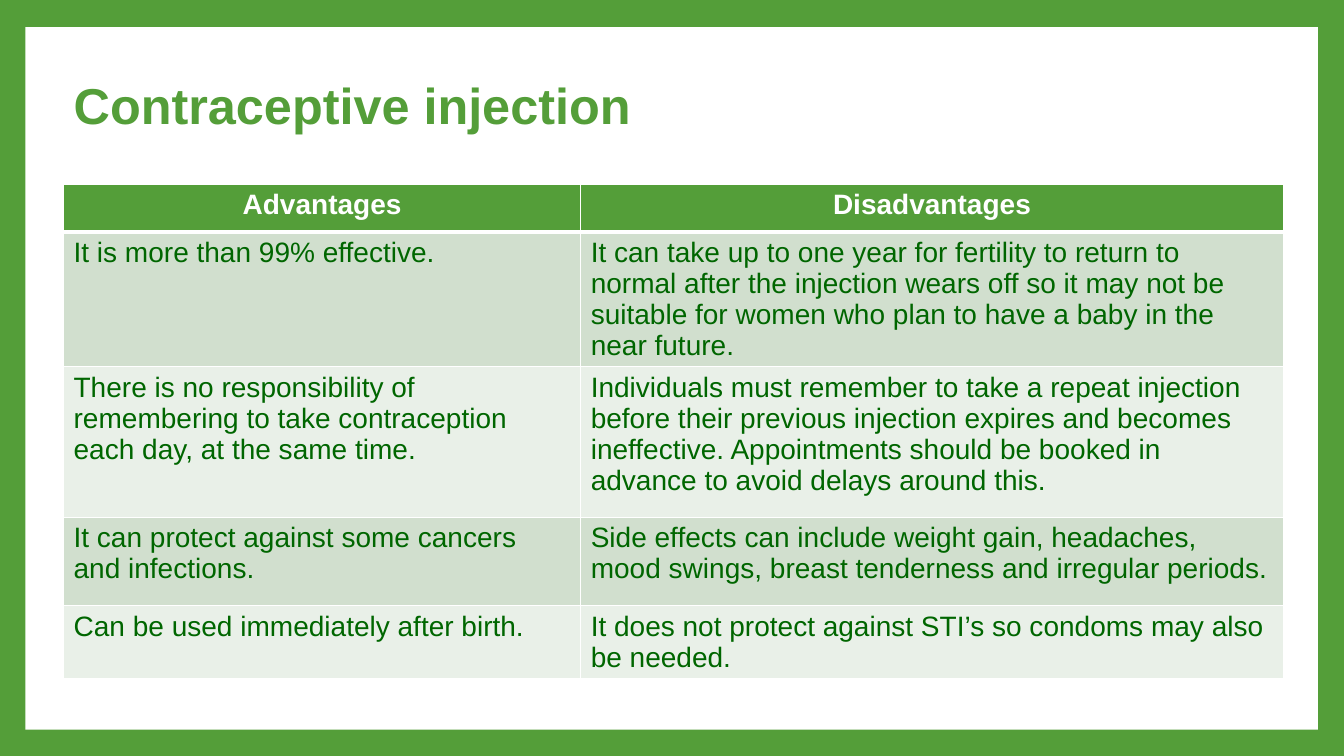
"""Build a slide comparing the pros and cons of the contraceptive injection."""
from dataclasses import dataclass

from pptx import Presentation
from pptx import util as u
from pptx.dml.color import RGBColor
from pptx.enum import shapes, text
from pptx.oxml import parse_xml
from pptx.oxml.ns import nsdecls


@dataclass(frozen=True)
class Theme:
    """Colours, font and type sizes of the slide."""
    green: str = "549E39"
    white: str = "FFFFFF"
    ink: str = "006600"
    bands: tuple[str, str] = ("D1DFCE", "E9F0E8")
    font: str = "Arial"
    title_size: int = 36
    body_size: int = 20
    rule: int = 1
    header_rule: int = 3


@dataclass(frozen=True)
class Box:
    """A rectangle in percent of the slide's width and height."""
    left: float
    top: float
    width: float
    height: float

    def emu(self) -> tuple[int, int, int, int]:
        """Return left, top, width and height as lengths."""
        return across(self.left), down(self.top), across(self.width), down(self.height)


@dataclass(frozen=True)
class Row:
    """A table row with its height in percent of the slide's height."""
    height: float
    advantage: str
    disadvantage: str


THEME = Theme()
WIDTH, HEIGHT = u.Inches(13.33), u.Inches(7.5)
MARGIN = 4.73
COLUMNS = (38.48, 52.28)
PANEL = Box(1.88, 3.6, 96.17, 92.93)
TITLE = Box(MARGIN, 10, 81, 19.73)
ROWS = (
    Row(6.27, "Advantages", "Disadvantages"),
    Row(15.73, "It is more than 99% effective.",
        "It can take up to one year for fertility to return to normal after the injection "
        "wears off so it may not be suitable for women who plan to have a baby in the near future."),
    Row(19.87, "There is no responsibility of remembering to take contraception each day, "
        "at the same time.",
        "Individuals must remember to take a repeat injection before their previous injection "
        "expires and becomes ineffective. Appointments should be booked in advance to avoid "
        "delays around this."),
    Row(11.73, "It can protect against some cancers and infections.",
        "Side effects can include weight gain, headaches, mood swings, breast tenderness "
        "and irregular periods."),
    Row(9.2, "Can be used immediately after birth.",
        "It does not protect against STI’s so condoms may also be needed."),
)
GRID = Box(MARGIN, 24.4, sum(COLUMNS), sum(row.height for row in ROWS))


def across(share: float) -> int:
    """Convert a percentage of the slide's width to a length."""
    return round(WIDTH * share / 100)


def down(share: float) -> int:
    """Convert a percentage of the slide's height to a length."""
    return round(HEIGHT * share / 100)


def paint(fill, colour: str) -> None:
    """Give a fill one solid colour."""
    fill.solid()
    fill.fore_color.rgb = RGBColor.from_string(colour)


def style(p, size: int, colour: str, bold: bool) -> None:
    """Set the font of a paragraph."""
    p.font.name, p.font.size, p.font.bold = THEME.font, u.Pt(size), bold
    p.font.color.rgb = RGBColor.from_string(colour)


def add_borders(cell, top: int, bottom: int) -> None:
    """Draw white borders round a cell, with widths in points."""
    props = cell._tc.get_or_add_tcPr()
    for side, width in zip("LRTB", (THEME.rule, THEME.rule, top, bottom)):
        props.append(parse_xml(
            f'<a:ln{side} {nsdecls("a")} w="{u.Pt(width)}"><a:solidFill>'
            f'<a:srgbClr val="{THEME.white}"/></a:solidFill></a:ln{side}>'))


def add_title(s) -> None:
    """Fill the title placeholder and lay the white panel behind it."""
    title = s.shapes.title
    title.left, title.top, title.width, title.height = TITLE.emu()
    tf = title.text_frame
    tf.text = "Contraceptive injection"
    tf.word_wrap, tf.auto_size = True, text.MSO_AUTO_SIZE.NONE
    tf.vertical_anchor = text.MSO_ANCHOR.TOP
    p = tf.paragraphs[0]
    p.alignment, p.line_spacing = text.PP_ALIGN.LEFT, 0.9
    style(p, THEME.title_size, THEME.green, True)

    panel = s.shapes.add_shape(shapes.MSO_SHAPE.RECTANGLE, *PANEL.emu())
    panel.shadow.inherit = False
    paint(panel.fill, THEME.white)
    panel.line.fill.background()
    title.element.addprevious(panel.element)


def add_comparison(s) -> None:
    """Add the table of advantages and disadvantages."""
    table = s.shapes.add_table(len(ROWS), len(COLUMNS), *GRID.emu()).table
    for column, width in zip(table.columns, COLUMNS):
        column.width = across(width)
    for i, row in enumerate(ROWS):
        table.rows[i].height = down(row.height)
        header = i == 0
        for j, words in enumerate((row.advantage, row.disadvantage)):
            cell = table.cell(i, j)
            cell.text = words
            add_borders(cell, THEME.header_rule if i == 1 else THEME.rule,
                        THEME.header_rule if header else THEME.rule)
            paint(cell.fill, THEME.green if header else THEME.bands[(i - 1) % 2])
            p = cell.text_frame.paragraphs[0]
            p.alignment = text.PP_ALIGN.CENTER if header else text.PP_ALIGN.LEFT
            style(p, THEME.body_size, THEME.white if header else THEME.ink, header)


def main() -> None:
    """Create and save the presentation."""
    prs = Presentation()
    prs.slide_width, prs.slide_height = WIDTH, HEIGHT
    s = prs.slides.add_slide(prs.slide_layouts[5])
    paint(s.background.fill, THEME.green)
    add_title(s)
    add_comparison(s)
    prs.save("out.pptx")


if __name__ == "__main__":
    main()
